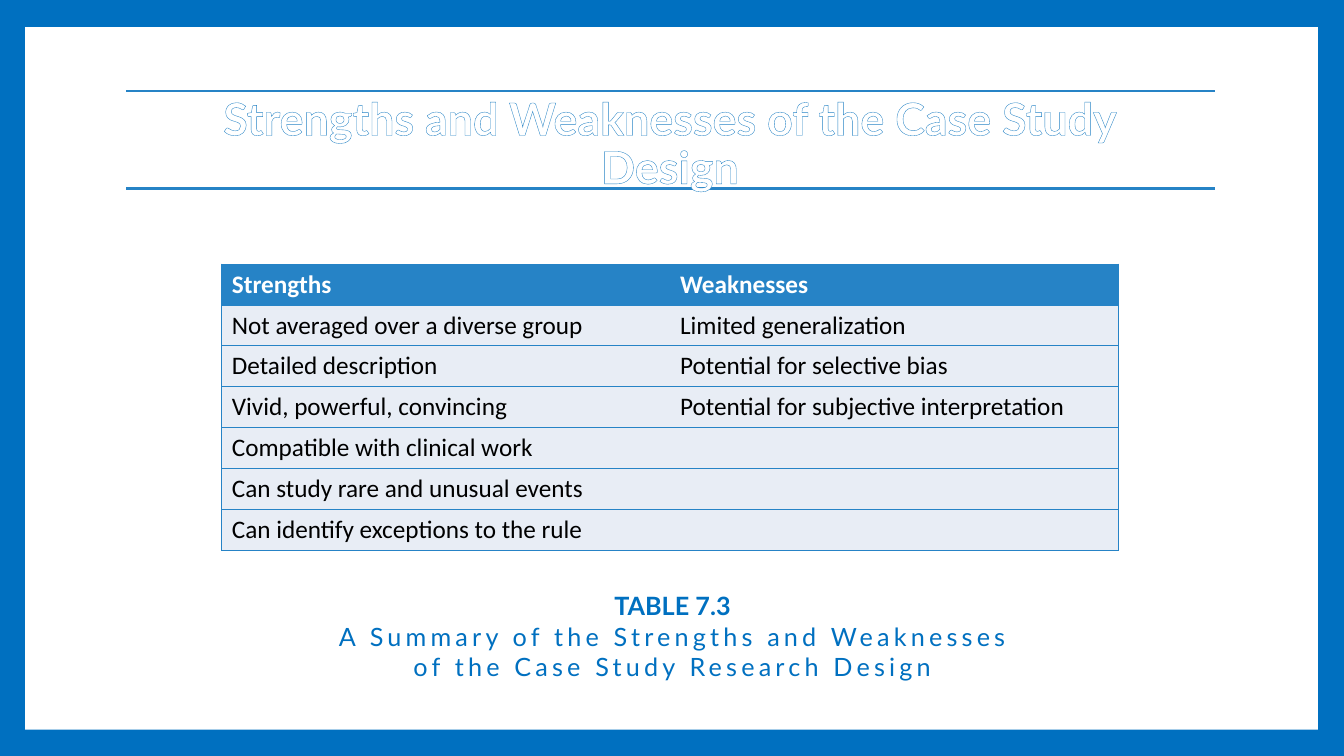
from dataclasses import dataclass
from itertools import zip_longest

from lxml.etree import SubElement
from pptx import Presentation
from pptx.dml.color import RGBColor
from pptx.enum.shapes import MSO_CONNECTOR, MSO_SHAPE
from pptx.enum.text import MSO_ANCHOR, MSO_AUTO_SIZE, PP_ALIGN
from pptx.oxml import parse_xml
from pptx.oxml.ns import nsdecls, qn
from pptx.slide import Slide
from pptx.table import _Cell as Cell
from pptx.text.text import Font
from pptx.util import Inches, Pt

COLORS = {
    "frame": "0070C0",
    "accent": "2683C6",
    "row": "E8EDF5",
    "white": "FFFFFF",
    "black": "000000",
}

STRENGTHS = [
    "Strengths",
    "Not averaged over a diverse group",
    "Detailed description",
    "Vivid, powerful, convincing",
    "Compatible with clinical work",
    "Can study rare and unusual events",
    "Can identify exceptions to the rule",
]
WEAKNESSES = [
    "Weaknesses",
    "Limited generalization",
    "Potential for selective bias",
    "Potential for subjective interpretation",
]


@dataclass(frozen=True)
class Rule:
    y: float
    left: float = 1.25
    right: float = 12.05


@dataclass(frozen=True)
class TextStyle:
    face: str
    size: float
    color: str
    bold: bool = False


RULES = [Rule(1.87), Rule(0.9)]
TITLE_STYLE = TextStyle("Lato", 32, "white", True)
CAPTION_STYLE = TextStyle("Lato", 18, "frame")
HEADER_STYLE = TextStyle("Calibri", 18, "white", True)
BODY_STYLE = TextStyle("Calibri", 18, "black")


def rgb(name: str) -> RGBColor:
    return RGBColor.from_string(COLORS[name])


def apply_style(font: Font, style: TextStyle) -> None:
    font.name = style.face
    font.size = Pt(style.size)
    font.bold = style.bold
    font.color.rgb = rgb(style.color)


def line_xml(tag: str, width: int, color: str | None):
    paint = (
        f'<a:solidFill><a:srgbClr val="{COLORS[color]}"/></a:solidFill>'
        if color
        else "<a:noFill/>"
    )
    return parse_xml(f'<a:{tag} {nsdecls("a")} w="{width}">{paint}</a:{tag}>')


def add_panel(slide: Slide) -> None:
    panel = slide.shapes.add_shape(
        MSO_SHAPE.RECTANGLE, Inches(0.25), Inches(0.27), Inches(12.82), Inches(6.97)
    )
    panel.shadow.inherit = False
    panel.fill.solid()
    panel.fill.fore_color.rgb = rgb("white")
    panel.line.fill.background()


def add_rule(slide: Slide, rule: Rule) -> None:
    connector = slide.shapes.add_connector(
        MSO_CONNECTOR.STRAIGHT,
        Inches(rule.left), Inches(rule.y), Inches(rule.right), Inches(rule.y),
    )
    connector.line.color.rgb = rgb("accent")
    connector.line.width = Pt(1.5)
    SubElement(connector.element.spPr, qn("a:effectLst"))


def format_title(slide: Slide) -> None:
    title = slide.shapes.title
    title.left, title.top = Inches(1.54), Inches(0.7)
    title.width, title.height = Inches(10.21), Inches(1.48)
    frame = title.text_frame
    frame.text = "Strengths and Weaknesses of the Case Study Design"
    frame.word_wrap = True
    frame.auto_size = MSO_AUTO_SIZE.NONE
    frame.vertical_anchor = MSO_ANCHOR.MIDDLE
    heading = frame.paragraphs[0]
    heading.alignment = PP_ALIGN.CENTER
    heading.line_spacing = 0.9
    apply_style(heading.font, TITLE_STYLE)
    letters = heading.runs[0].font
    letters.color.rgb = rgb(TITLE_STYLE.color)
    heading.runs[0]._r.get_or_add_rPr().insert(0, line_xml("ln", Pt(0.52), "accent"))
    title.element.getparent().append(title.element)


def add_caption(slide: Slide) -> None:
    caption = slide.shapes.add_textbox(
        Inches(2.59), Inches(5.81), Inches(8.11), Inches(1.01)
    )
    frame = caption.text_frame
    frame.word_wrap = True
    frame.auto_size = MSO_AUTO_SIZE.SHAPE_TO_FIT_TEXT
    first, second = frame.paragraphs[0], frame.add_paragraph()
    label = first.add_run()
    label.text = "TABLE 7.3"
    label.font.bold = True
    first.add_line_break()
    for paragraph, wording in (
        (first, "A Summary of the Strengths and Weaknesses"),
        (second, "of the Case Study Research Design"),
    ):
        summary = paragraph.add_run()
        summary.text = wording
        summary._r.get_or_add_rPr().set("spc", "300")
        paragraph.alignment = PP_ALIGN.CENTER
        paragraph._p.get_or_add_pPr().set("marL", str(Inches(0.05)))
        apply_style(paragraph.font, CAPTION_STYLE)


def format_cell(cell: Cell, wording: str, header: bool, first_column: bool) -> None:
    cell.text = wording
    apply_style(
        cell.text_frame.paragraphs[0].font, HEADER_STYLE if header else BODY_STYLE
    )
    cell.fill.solid()
    cell.fill.fore_color.rgb = rgb("accent" if header else "row")
    borders = {
        "lnL": "accent" if first_column else None,
        "lnR": None if first_column else "accent",
        "lnT": "accent",
        "lnB": "accent",
    }
    properties = cell._tc.get_or_add_tcPr()
    for position, (tag, color) in enumerate(borders.items()):
        properties.insert(position, line_xml(tag, Pt(1), color))


def add_comparison(slide: Slide) -> None:
    pairs = list(zip_longest(STRENGTHS, WEAKNESSES, fillvalue=""))
    comparison = slide.shapes.add_table(
        len(pairs), 2, Inches(2.2), Inches(2.62), Inches(8.89), Inches(2.84)
    ).table
    comparison.horz_banding = False
    for row, pair in enumerate(pairs):
        for column, wording in enumerate(pair):
            format_cell(comparison.cell(row, column), wording, row == 0, column == 0)


def main() -> None:
    presentation = Presentation()
    presentation.slide_width = Inches(13.33)
    presentation.slide_height = Inches(7.5)
    slide = presentation.slides.add_slide(presentation.slide_layouts[5])
    slide.background.fill.solid()
    slide.background.fill.fore_color.rgb = rgb("frame")
    add_panel(slide)
    for rule in RULES:
        add_rule(slide, rule)
    format_title(slide)
    add_caption(slide)
    add_comparison(slide)
    presentation.save("out.pptx")


if __name__ == "__main__":
    main()
